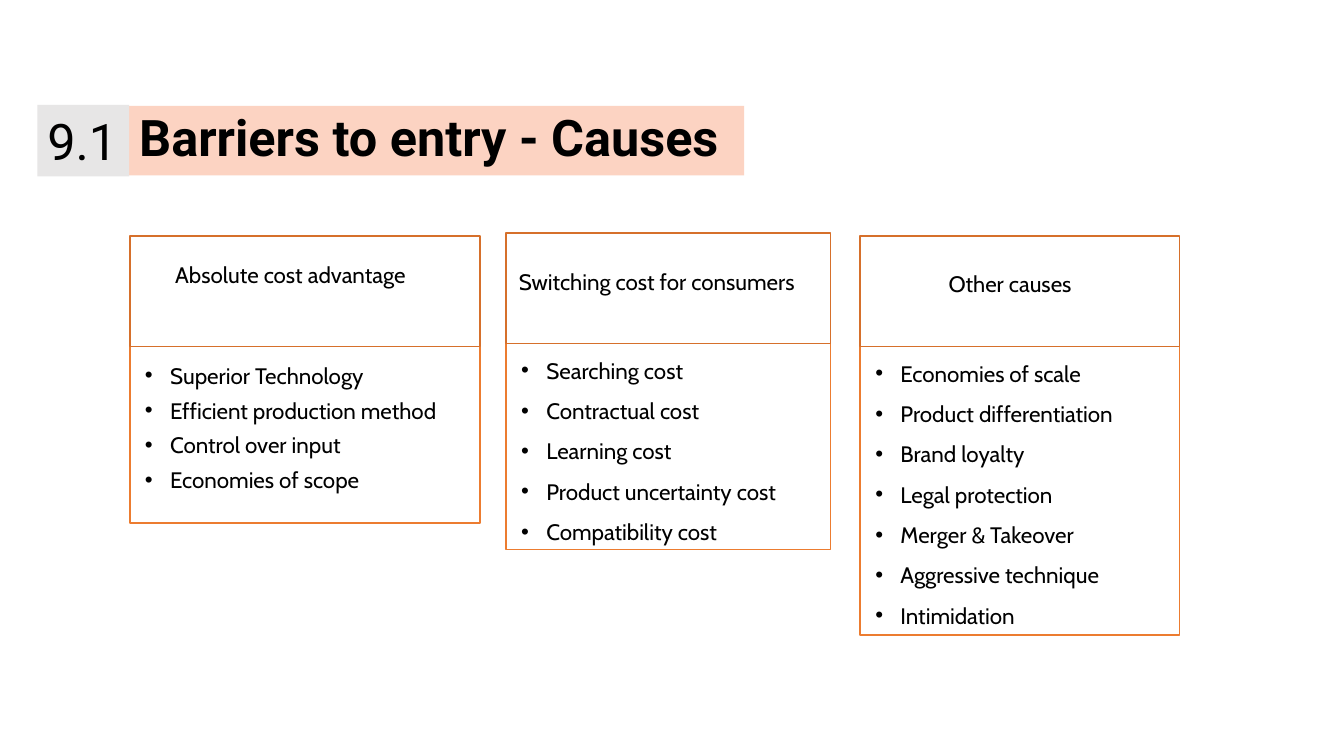
"""Build the slide on causes of barriers to entry."""
from dataclasses import dataclass
from typing import Any

from lxml.etree import SubElement
from pptx import Presentation
from pptx.dml.color import RGBColor as Rgb
from pptx.enum.shapes import MSO_SHAPE as Kind
from pptx.enum.text import MSO_ANCHOR as Anchor, MSO_AUTO_SIZE as Fit, PP_ALIGN as Align
from pptx.oxml.ns import qn
from pptx.util import Inches, Pt


@dataclass(frozen=True)
class Theme:
    ink: str = "000000"
    peach: str = "FCD3C2"
    grey: str = "E7E6E6"
    rust: str = "D6702B"
    orange: str = "EC7C30"
    head: str = "Roboto"
    body: str = "Cabin"
    large: int = 36
    small: int = 16


@dataclass(frozen=True)
class Box:
    left: float
    top: float
    width: float
    height: float


@dataclass(frozen=True)
class Pad:
    left: float = 0.1
    top: float = 0.05
    right: float = 0.1
    bottom: float = 0.05


@dataclass(frozen=True)
class Panel:
    slot: int
    box: Box
    label: str
    place: Box
    inset: Pad
    drop: float
    gap: float
    items: tuple[str, ...]


THEME = Theme()
WIDE, HIGH = Inches(13.33), Inches(7.5)
HEAD = 14.67
TITLE = Box(9.6, 14, 45.76, 9.2)
BADGE = Box(2.78, 13.87, 6.83, 9.47)
PANELS = (
    Panel(1, Box(9.66, 31.2, 26.07, 23.33), "Absolute cost advantage",
          Box(12.3, 33.87, 19.73, 4.93), Pad(), 0.15, 5.7,
          ("Superior Technology", "Efficient production method",
           "Control over input", "Economies of scope")),
    Panel(2, Box(37.65, 30.8, 24.15, 27.2), "Switching cost for consumers",
          Box(37.88, 34.8, 23.18, 4.93), Pad(), 0.13, 9.6,
          ("Searching cost", "Contractual cost", "Learning cost",
           "Product uncertainty cost", "Compatibility cost")),
    Panel(4, Box(64, 31.2, 23.75, 38.13), "Other causes",
          Box(64.05, 35.6, 23.63, 3.73), Pad(0.87, 0.01, 0, 0), 0.13, 9.6,
          ("Economies of scale", "Product differentiation", "Brand loyalty",
           "Legal protection", "Merger & Takeover", "Aggressive technique",
           "Intimidation")),
)


def apply(target: Any, values: dict[str, Any]) -> None:
    """Set each named format value on the target."""
    for name, value in values.items():
        setattr(target, name, value)


def spot(box: Box) -> dict[str, int]:
    """Turn percent shares of the slide into lengths."""
    return {"left": int(WIDE * box.left / 100), "top": int(HIGH * box.top / 100),
            "width": int(WIDE * box.width / 100), "height": int(HIGH * box.height / 100)}


def paint(shape: Any, fill: str = "", line: str = "") -> None:
    """Set the fill and outline, or clear them."""
    if fill:
        shape.fill.solid()
        shape.fill.fore_color.rgb = Rgb.from_string(fill)
    else:
        shape.fill.background()
    if line:
        shape.line.color.rgb = Rgb.from_string(line)
        shape.line.width = Pt(1)
    else:
        shape.line.fill.background()


def mark(para: Any) -> None:
    """Give a paragraph a round bullet and hanging indent."""
    props = para._p.get_or_add_pPr()
    props.set("marL", str(Inches(0.4)))
    props.set("indent", str(Inches(-0.25)))
    tint = SubElement(props, qn("a:buClr"))
    SubElement(tint, qn("a:srgbClr")).set("val", THEME.ink)
    SubElement(props, qn("a:buFont")).set("typeface", "Arial")
    SubElement(props, qn("a:buChar")).set("char", "•")


def write(shape: Any, lines: tuple[str, ...], face: str, size: int, pad: Pad,
          bold: bool = False, list_gap: float | None = None,
          lead: float = 1.0, anchor: Any = Anchor.TOP) -> None:
    """Fill a shape with styled paragraphs."""
    frame = shape.text_frame
    apply(frame, {"word_wrap": True, "auto_size": Fit.NONE, "vertical_anchor": anchor,
                  "margin_left": Inches(pad.left), "margin_top": Inches(pad.top),
                  "margin_right": Inches(pad.right), "margin_bottom": Inches(pad.bottom)})
    for rank, text in enumerate(lines):
        para = frame.add_paragraph() if rank else frame.paragraphs[0]
        if list_gap is not None:
            mark(para)
        apply(para, {"alignment": Align.LEFT, "line_spacing": lead, "space_after": Pt(0),
                     "space_before": Pt(list_gap if rank and list_gap else 0)})
        run = para.add_run()
        run.text = text
        apply(run.font, {"name": face, "size": Pt(size), "bold": bold})
        run.font.color.rgb = Rgb.from_string(THEME.ink)


def draw(slide: Any, panel: Panel) -> None:
    """Draw one column with its head, label and list."""
    box = panel.box
    head = slide.shapes.add_shape(
        Kind.RECTANGLE, **spot(Box(box.left, box.top, box.width, HEAD)))
    head.shadow.inherit = False
    paint(head, line=THEME.rust)
    label = slide.shapes.add_textbox(**spot(panel.place))
    write(label, (panel.label,), THEME.body, THEME.small, panel.inset)
    body = slide.placeholders[panel.slot]
    apply(body, spot(Box(box.left, box.top + HEAD, box.width, box.height)))
    paint(body, line=THEME.orange)
    write(body, panel.items, THEME.body, THEME.small,
          Pad(0, panel.drop, 0, 0), list_gap=panel.gap)


def main() -> None:
    """Build and save the deck."""
    deck = Presentation()
    apply(deck, {"slide_width": WIDE, "slide_height": HIGH})
    slide = deck.slides.add_slide(deck.slide_layouts[4])
    title = slide.shapes.title
    apply(title, spot(TITLE))
    paint(title, THEME.peach)
    write(title, ("Barriers to entry - Causes",), THEME.head, THEME.large, Pad(),
          bold=True, lead=0.9, anchor=Anchor.MIDDLE)
    badge = slide.shapes.add_textbox(**spot(BADGE))
    paint(badge, THEME.grey)
    write(badge, ("9.1",), THEME.head, THEME.large, Pad())
    for panel in PANELS:
        draw(slide, panel)
    spare = slide.placeholders[3].element
    spare.getparent().remove(spare)
    deck.save("out.pptx")


if __name__ == "__main__":
    main()
